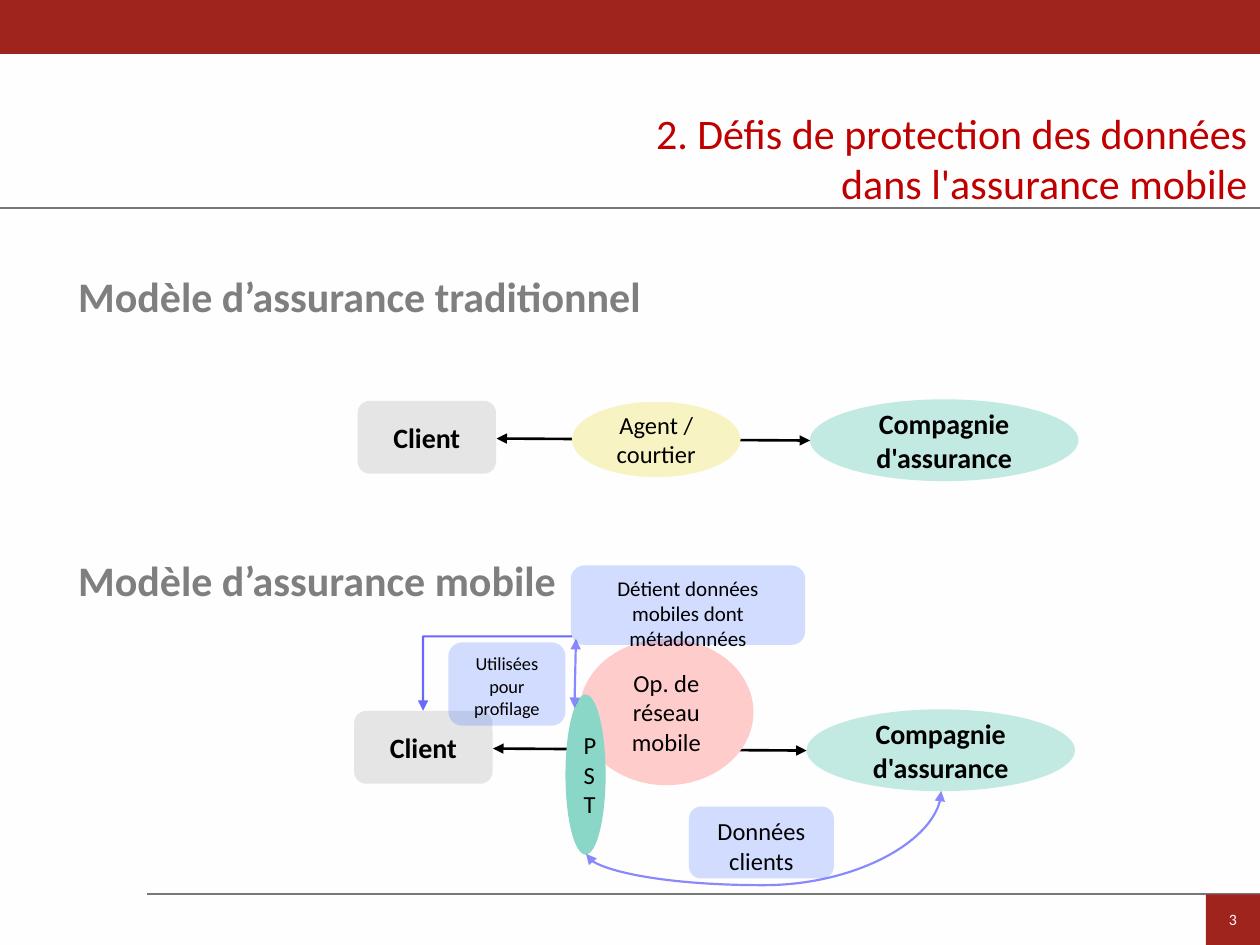
from lxml import etree
from pptx import Presentation
from pptx import util as u
from pptx.dml.color import RGBColor
from pptx.enum import shapes, text
from pptx.oxml.ns import qn

RED, RULE, BLACK, WHITE = "A0241E", "777978", "000000", "FEFEFE"
MINT, GREY, NOTE, FLOW = "C2EAE2", "E5E5E5", "3366FF", "0000FF"
RECT, ROUND, OVAL = (shapes.MSO_SHAPE.RECTANGLE, shapes.MSO_SHAPE.ROUNDED_RECTANGLE,
                     shapes.MSO_SHAPE.OVAL)
LINK = shapes.MSO_CONNECTOR


def rgb(value):
    return RGBColor.from_string(value)


def cm(*lengths):
    return [u.Cm(length) for length in lengths]


def set_alpha(element, percent):
    """Make the solid colour inside a fill or line partly transparent."""
    colour = element.find(".//" + qn("a:srgbClr"))
    etree.SubElement(colour, qn("a:alpha")).set("val", str(percent * 1000))


class SlideBuilder:
    font = "Calibri"

    def __init__(self, slide):
        self.slide = slide
        slide.background.fill.solid()
        slide.background.fill.fore_color.rgb = rgb(WHITE)

    def label(self, frame, words, size, color, bold=False,
              align=text.PP_ALIGN.CENTER, anchor=text.MSO_ANCHOR.MIDDLE):
        frame.text = words
        frame.word_wrap = True
        frame.auto_size = text.MSO_AUTO_SIZE.NONE
        frame.vertical_anchor = anchor
        paragraph = frame.paragraphs[0]
        paragraph.alignment = align
        for run in paragraph.runs:
            run.font.name, run.font.size, run.font.bold = self.font, u.Pt(size), bold
            run.font.color.rgb = rgb(color)
        return paragraph

    def place(self, holder, box):
        holder.left, holder.top, holder.width, holder.height = cm(*box)

    def title(self, words, box):
        holder = self.slide.shapes.title
        self.place(holder, box)
        self.label(holder.text_frame, words, 24, "C00000",
                   align=text.PP_ALIGN.RIGHT, anchor=text.MSO_ANCHOR.TOP)

    def heading(self, index, words, box):
        holder = self.slide.placeholders[index]
        self.place(holder, box)
        paragraph = self.label(holder.text_frame, words, 24, "7F7F7F", True,
                               text.PP_ALIGN.LEFT, text.MSO_ANCHOR.TOP)
        paragraph.space_before, paragraph.space_after = u.Pt(0), u.Pt(10)
        properties = paragraph._p.get_or_add_pPr()
        properties.set("marL", "0")
        properties.set("indent", "0")
        etree.SubElement(properties, qn("a:buNone"))

    def shape(self, kind, box, fill, words="", size=14, color=BLACK, bold=False,
              anchor=text.MSO_ANCHOR.MIDDLE):
        shape = self.slide.shapes.add_shape(kind, *cm(*box))
        shape.shadow.inherit = False
        shape.fill.solid()
        shape.fill.fore_color.rgb = rgb(fill)
        shape.line.fill.background()
        if words:
            self.label(shape.text_frame, words, size, color, bold, anchor=anchor)
        return shape

    def note(self, box, words, size):
        note = self.shape(ROUND, box, NOTE, words, size, anchor=text.MSO_ANCHOR.TOP)
        set_alpha(note._element.spPr, 22)

    def line(self, start, end, color, width=1.25, heads="", alpha=100, kind=LINK.STRAIGHT):
        line = self.slide.shapes.add_connector(kind, *cm(*start, *end))
        line.line.color.rgb = rgb(color)
        line.line.width = u.Pt(width)
        stroke = line._element.spPr.find(qn("a:ln"))
        if alpha < 100:
            set_alpha(stroke, alpha)
        for head in heads.split():
            etree.SubElement(stroke, qn("a:" + head)).set("type", "triangle")
        etree.SubElement(line._element.spPr, qn("a:effectLst"))
        return line


def main():
    deck = Presentation()
    deck.slide_width, deck.slide_height = cm(25.4, 19.05)
    page = SlideBuilder(deck.slides.add_slide(deck.slide_layouts[3]))
    both = "headEnd tailEnd"

    # Frame of the page
    page.line((2.97, 18.03), (25.4, 18.03), RULE)
    page.line((0, 4.19), (25.4, 4.19), RULE)
    page.shape(RECT, (0, 0, 25.4, 1.09), RED)
    page.shape(RECT, (24.31, 18.03, 1.09, 1.02), RED, "3", 9, WHITE)

    # Title and headings
    page.title("2. Défis de protection des données dans l'assurance mobile",
               (11.28, 2.03, 14.12, 2.31))
    page.heading(1, "Modèle d’assurance traditionnel", (1.32, 5.33, 23.62, 1.27))
    page.heading(2, "Modèle d’assurance mobile", (1.32, 11.05, 23.62, 1.27))

    # Client and insurer, linked in both models
    for left, top in ((7.21, 8.05), (7.14, 14.3)):
        page.shape(OVAL, (left + 9.12, top, 5.41, 1.65), MINT,
                   "Compagnie d'assurance", 16, bold=True)
        page.line((left + 2.8, top + 0.79), (left + 9.12, top + 0.83), BLACK, 1.5, both)
        page.shape(ROUND, (left, top + 0.03, 2.79, 1.47), GREY, "Client", 16, bold=True)

    # Intermediaries
    page.shape(OVAL, (11.53, 8.1, 3.4, 1.52), "F7F3C3", "Agent / courtier")
    page.shape(OVAL, (11.68, 12.88, 3.51, 2.95), "FFCCCC", "Op. de réseau mobile")
    provider = page.shape(OVAL, (11.4, 14, 0.81, 3.23), "8AD6C7", "PST")
    provider.text_frame._txBody.bodyPr.set("vert", "wordArtVert")
    provider.text_frame.paragraphs[0].runs[0]._r.get_or_add_rPr().set("spc", "200")

    # Data flows and their notes
    page.note((11.51, 11.4, 4.72, 1.6), "Détient données mobiles dont métadonnées", 12)
    profiling = page.line((11.53, 12.83), (8.53, 14.33), FLOW, heads="tailEnd",
                          alpha=59, kind=LINK.ELBOW)
    profiling._element.spPr.find(qn("a:prstGeom")).set("prst", "bentConnector2")
    page.line((11.61, 12.88), (11.58, 14.27), FLOW, heads=both, alpha=45)
    page.note((9.04, 12.95, 2.36, 1.68), "Utilisées pour profilage", 10.5)

    # The curve is laid out upright, then turned by a quarter
    customer_data = page.line((16.03, 20.16), (14.76, 13), FLOW, heads=both,
                              alpha=45, kind=LINK.CURVE)
    outline = customer_data._element.spPr
    outline.find(qn("a:xfrm")).set("rot", "5400000")
    guide = etree.SubElement(outline.find(".//" + qn("a:avLst")), qn("a:gd"))
    guide.set("name", "adj1")
    guide.set("fmla", "val -49700")
    page.note((13.89, 16.26, 2.92, 1.45), "Données clients", 14)

    deck.save("out.pptx")


if __name__ == "__main__":
    main()
